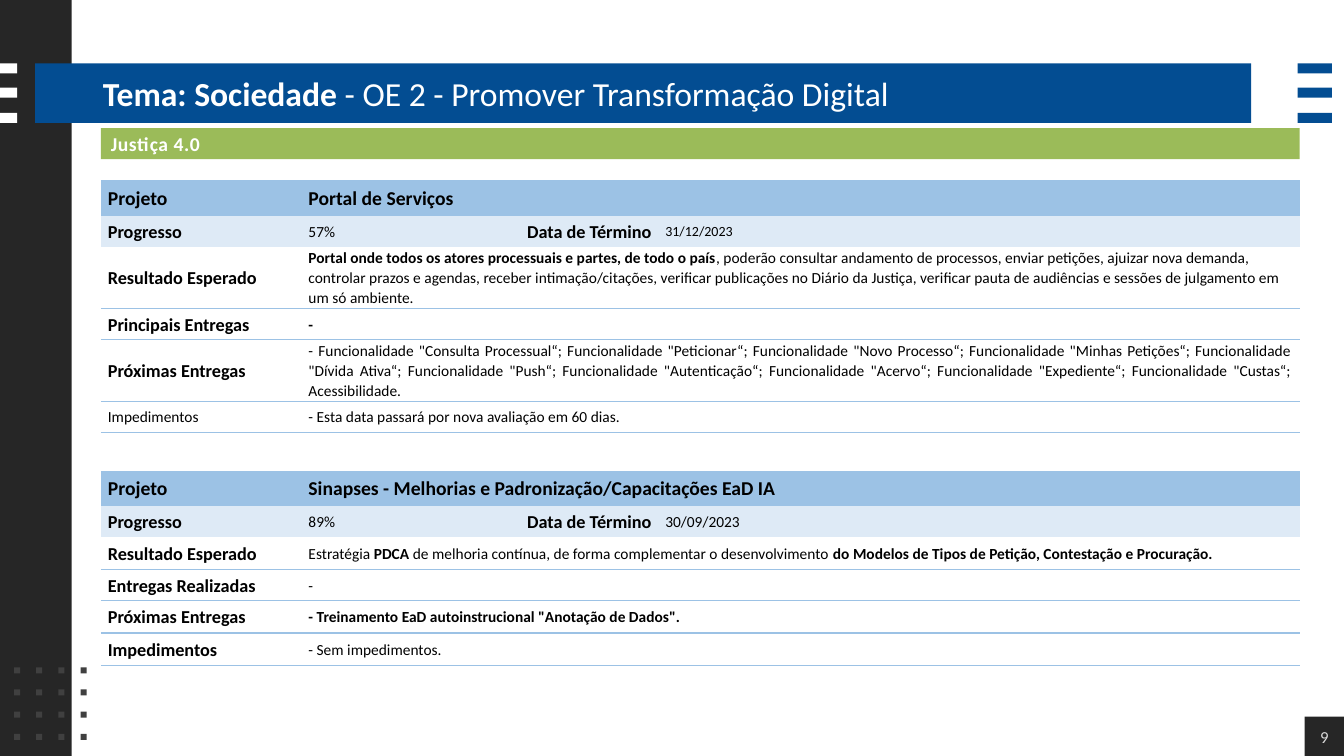
import pptx
import pptx.util
import pptx.dml.color
import pptx.enum.shapes
import pptx.enum.text
import pptx.oxml
import pptx.oxml.ns

Inches = pptx.util.Inches
Pt = pptx.util.Pt
ALIGN = pptx.enum.text.PP_ALIGN
LEFT, RIGHT, CENTER, JUSTIFY = ALIGN.LEFT, ALIGN.RIGHT, ALIGN.CENTER, ALIGN.JUSTIFY

FONT = "Calibri"
DARK, BLUE, GREEN, WHITE, BLACK = "262626", "034D92", "9BBB59", "FFFFFF", "000000"
DOT_GRAY, NUMBER_GRAY = "404040", "D9D9D9"
HEADER_BLUE, PROGRESS_BLUE = "9CC2E5", "DEEAF6"
PLAIN_TABLE_STYLE = "{2D5ABB26-0587-4C30-8999-92F81FD0307C}"

TITLE = [("Tema: Sociedade ", True), ("- OE 2 - Promover Transformação Digital", False)]
SECTION = [("Justiça 4.0", True)]
SLIDE_NUMBER = [("9", False)]
COLUMN_WIDTHS = [1.99, 1.77, 1.77, 6.36]

PROJECTS = [
    {
        "top": 1.79,
        "heights": [0.35, 0.31, 0.61, 0.31, 0.61, 0.31],
        "name": "Portal de Serviços",
        "progress": "57%",
        "end": ("31/12/2023", 10),
        "details": [
            ("Resultado Esperado", 13, True, LEFT, [
                ("Portal onde todos os atores processuais e partes, de todo o país", True),
                (", poderão consultar andamento de processos, enviar petições, ajuizar nova demanda, "
                 "controlar prazos e agendas, receber intimação/citações, verificar publicações no "
                 "Diário da Justiça, verificar pauta de audiências e sessões de julgamento em um só "
                 "ambiente.", False)]),
            ("Principais Entregas", 13, True, JUSTIFY, [("-", True)]),
            ("Próximas Entregas", 13, True, JUSTIFY, [
                ('- Funcionalidade "Consulta Processual“; Funcionalidade "Peticionar“; '
                 'Funcionalidade "Novo Processo“; Funcionalidade "Minhas Petições“; '
                 'Funcionalidade "Dívida Ativa“; Funcionalidade "Push“; '
                 'Funcionalidade "Autenticação“; Funcionalidade "Acervo“; '
                 'Funcionalidade "Expediente“; Funcionalidade "Custas“; Acessibilidade.', False)]),
            ("Impedimentos", 11, False, JUSTIFY, [
                ("- Esta data passará por nova avaliação em 60 dias.", False)]),
        ],
    },
    {
        "top": 4.67,
        "heights": [0.35, 0.31, 0.32, 0.31, 0.32, 0.32],
        "name": "Sinapses - Melhorias e Padronização/Capacitações EaD IA",
        "progress": "89%",
        "end": ("30/09/2023", 11),
        "details": [
            ("Resultado Esperado", 13, True, JUSTIFY, [
                ("Estratégia ", False), ("PDCA", True),
                (" de melhoria contínua, de forma complementar o desenvolvimento ", False),
                ("do Modelos de Tipos de Petição, Contestação e Procuração.", True)]),
            ("Entregas Realizadas", 13, True, LEFT, [("-", False)]),
            ("Próximas Entregas", 13, True, JUSTIFY, [
                ('- Treinamento EaD autoinstrucional "Anotação de Dados".', True)]),
            ("Impedimentos", 13, True, JUSTIFY, [("- Sem impedimentos.", False)]),
        ],
    },
]


def color(value):
    return pptx.dml.color.RGBColor.from_string(value)


def write(text_frame, runs, size, font_color, align=LEFT):
    paragraph = text_frame.paragraphs[0]
    paragraph.alignment = align
    for text, bold in runs:
        run = paragraph.add_run()
        run.text = text
        run.font.name = FONT
        run.font.size = Pt(size)
        run.font.bold = bold
        run.font.color.rgb = color(font_color)
    return paragraph


def add_block(slide, left, top, width, height, fill):
    shape = slide.shapes.add_shape(
        pptx.enum.shapes.MSO_SHAPE.RECTANGLE,
        Inches(left), Inches(top), Inches(width), Inches(height))
    shape.shadow.inherit = False
    shape.fill.solid()
    shape.fill.fore_color.rgb = color(fill)
    shape.line.fill.background()
    shape.text_frame.vertical_anchor = pptx.enum.text.MSO_ANCHOR.MIDDLE
    return shape


def add_bottom_border(cell):
    border = pptx.oxml.parse_xml(
        f'<a:lnB {pptx.oxml.ns.nsdecls("a")} w="12700"><a:solidFill>'
        f'<a:srgbClr val="{HEADER_BLUE}"/></a:solidFill></a:lnB>')
    cell._tc.get_or_add_tcPr().insert(0, border)


def fill_cell(cell, runs, size, align=LEFT):
    cell.vertical_anchor = pptx.enum.text.MSO_ANCHOR.MIDDLE
    cell.margin_left = cell.margin_right = Inches(0.07)
    cell.margin_top = cell.margin_bottom = 0
    paragraph = write(cell.text_frame, runs, size, BLACK, align)
    paragraph.line_spacing = 1.07
    paragraph.space_after = Pt(8)


def add_project_table(slide, project):
    heights = project["heights"]
    frame = slide.shapes.add_table(
        len(heights), len(COLUMN_WIDTHS), Inches(1), Inches(project["top"]),
        Inches(sum(COLUMN_WIDTHS)), Inches(sum(heights)))
    table = frame.table
    frame.element.find(".//" + pptx.oxml.ns.qn("a:tableStyleId")).text = PLAIN_TABLE_STYLE
    table.first_row = table.horz_banding = False
    for column, width in zip(table.columns, COLUMN_WIDTHS):
        column.width = Inches(width)
    row_fills = [HEADER_BLUE, PROGRESS_BLUE]
    for index, height in enumerate(heights):
        table.rows[index].height = Inches(height)
        for cell in table.rows[index].cells:
            if index < len(row_fills):
                cell.fill.solid()
                cell.fill.fore_color.rgb = color(row_fills[index])
            else:
                cell.fill.background()
                add_bottom_border(cell)
        if index != 1:
            table.cell(index, 1).merge(table.cell(index, 3))

    fill_cell(table.cell(0, 0), [("Projeto", True)], 14)
    fill_cell(table.cell(0, 1), [(project["name"], True)], 14)
    end_date, end_size = project["end"]
    fill_cell(table.cell(1, 0), [("Progresso", True)], 13)
    fill_cell(table.cell(1, 1), [(project["progress"], False)], 11)
    fill_cell(table.cell(1, 2), [("Data de Término", True)], 13, RIGHT)
    fill_cell(table.cell(1, 3), [(end_date, False)], end_size)
    for index, (label, size, bold, align, runs) in enumerate(project["details"], 2):
        fill_cell(table.cell(index, 0), [(label, bold)], size)
        fill_cell(table.cell(index, 1), runs, 11, align)


def main():
    presentation = pptx.Presentation()
    presentation.slide_width = Inches(13.33)
    presentation.slide_height = Inches(7.5)
    slide = presentation.slides.add_slide(presentation.slide_layouts[5])

    add_block(slide, 0, 0, 0.71, 7.5, DARK)
    add_block(slide, 0.35, 0.63, 12.06, 0.59, BLUE)
    for left, width, fill in [(0, 0.17, WHITE), (12.87, 0.34, BLUE)]:
        for top in (0.63, 0.87, 1.12):
            add_block(slide, left, top, width, 0.1, fill)
    for row in range(4):
        for column in range(4):
            add_block(slide, 0.14 + 0.22 * column, 6.62 + 0.22 * row, 0.06, 0.06, DOT_GRAY)

    title = slide.shapes.title
    title.left, title.top = Inches(0.92), Inches(0.64)
    title.width, title.height = Inches(11.5), Inches(0.56)
    title.text_frame.auto_size = pptx.enum.text.MSO_AUTO_SIZE.NONE
    title.text_frame.vertical_anchor = pptx.enum.text.MSO_ANCHOR.MIDDLE
    write(title.text_frame, TITLE, 24, WHITE)
    title.element.getparent().append(title.element)

    number = add_block(slide, 12.94, 7.11, 0.39, 0.39, DARK)
    number_frame = number.text_frame
    number_frame.margin_left = number_frame.margin_right = 0
    number_frame.margin_top = number_frame.margin_bottom = 0
    write(number_frame, SLIDE_NUMBER, 12, NUMBER_GRAY, CENTER)

    section = add_block(slide, 1, 1.27, 11.89, 0.31, GREEN)
    paragraph = write(section.text_frame, SECTION, 14, WHITE)
    paragraph.runs[0].font._element.set("spc", "40")

    for project in PROJECTS:
        add_project_table(slide, project)
    presentation.save("out.pptx")


if __name__ == "__main__":
    main()
